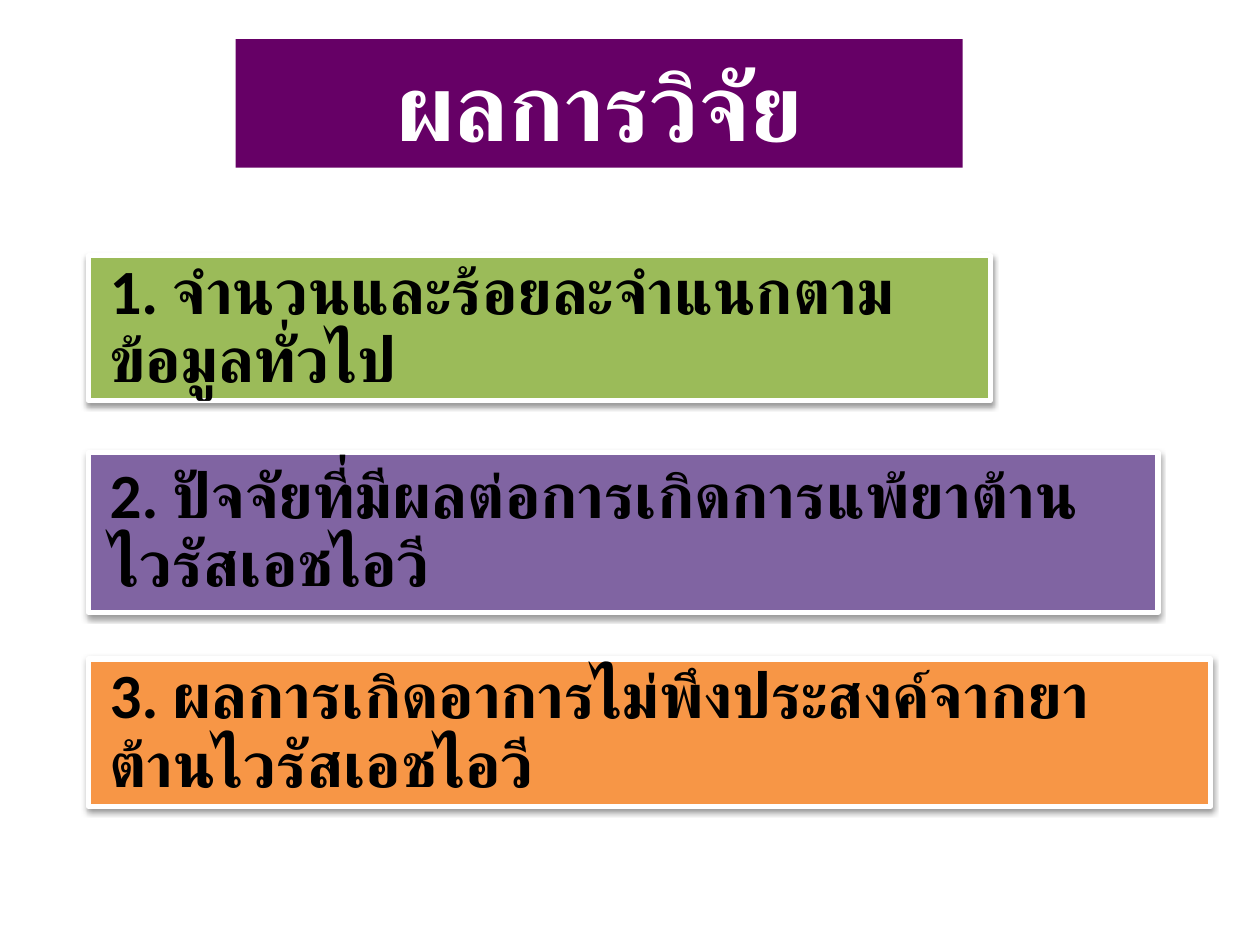
from lxml import etree
from pptx import Presentation
from pptx import util as u
from pptx.dml.color import RGBColor
from pptx.enum import shapes, text
from pptx.oxml import ns

THEME = {
    "title_fill": "660066", "title_text": "FFFFFF", "title_size": 54, "title_font": "Noto Sans",
    "body_text": "000000", "body_size": 36, "body_font": "Calibri",
    "outline": "FFFFFF", "shadow": "000000",
    "green": "9BBB59", "purple": "8064A2", "orange": "F79646",
}


def add_styled_run(paragraph, words, role):
    run = paragraph.add_run()
    run.text = words
    run.font.name = THEME[role + "_font"]
    run.font.size = u.Pt(THEME[role + "_size"])
    run.font.bold = True
    run.font.color.rgb = RGBColor.from_string(THEME[role + "_text"])


def add_soft_shadow(shape):
    shape.shadow.inherit = False
    effects = shape._element.spPr.find(ns.qn("a:effectLst"))
    shadow = etree.SubElement(effects, ns.qn("a:outerShdw"), blurRad=str(u.Pt(3.1)),
                              dist=str(u.Pt(1.6)), dir="5400000", rotWithShape="0")
    color = etree.SubElement(shadow, ns.qn("a:srgbClr"), val=THEME["shadow"])
    etree.SubElement(color, ns.qn("a:alpha"), val="38000")


presentation = Presentation()
presentation.slide_width, presentation.slide_height = u.Inches(10), u.Inches(7.5)
slide = presentation.slides.add_slide(presentation.slide_layouts[5])

title = slide.shapes.title
title.left, title.top = u.Inches(1.87), u.Inches(0.31)
title.width, title.height = u.Inches(5.77), u.Inches(1.02)
title.fill.solid()
title.fill.fore_color.rgb = RGBColor.from_string(THEME["title_fill"])
title.text_frame.auto_size = text.MSO_AUTO_SIZE.NONE
title.text_frame.vertical_anchor = text.MSO_ANCHOR.MIDDLE
title_paragraph = title.text_frame.paragraphs[0]
title_paragraph.alignment = text.PP_ALIGN.CENTER
add_styled_run(title_paragraph, "ผลการวิจัย", "title")

# Result bars share a left edge: top, width, height, colour, wording
bar_left, bar_inset = u.Inches(0.7), u.Inches(0.17)
results = [
    (2.03, 7.16, 1.15, "green", "1. จำนวนและร้อยละจำแนกตามข้อมูลทั่วไป"),
    (3.59, 8.49, 1.27, "purple", "2. ปัจจัยที่มีผลต่อการเกิดการแพ้ยาต้านไวรัสเอชไอวี"),
    (5.23, 8.91, 1.17, "orange", "3. ผลการเกิดอาการไม่พึงประสงค์จากยาต้านไวรัสเอชไอวี"),
]
for top, width, height, color, words in results:
    bar = slide.shapes.add_shape(shapes.MSO_SHAPE.RECTANGLE, bar_left, u.Inches(top),
                                 u.Inches(width), u.Inches(height))
    bar.fill.solid()
    bar.fill.fore_color.rgb = RGBColor.from_string(THEME[color])
    bar.line.color.rgb = RGBColor.from_string(THEME["outline"])
    bar.line.width = u.Pt(3)
    add_soft_shadow(bar)

    frame = bar.text_frame
    frame.word_wrap = True
    frame.vertical_anchor = text.MSO_ANCHOR.MIDDLE
    frame.margin_left = frame.margin_right = bar_inset
    frame.margin_top = frame.margin_bottom = bar_inset
    paragraph = frame.paragraphs[0]
    paragraph.alignment = text.PP_ALIGN.LEFT
    paragraph.line_spacing = 0.9
    add_styled_run(paragraph, words, "body")

presentation.save("out.pptx")
